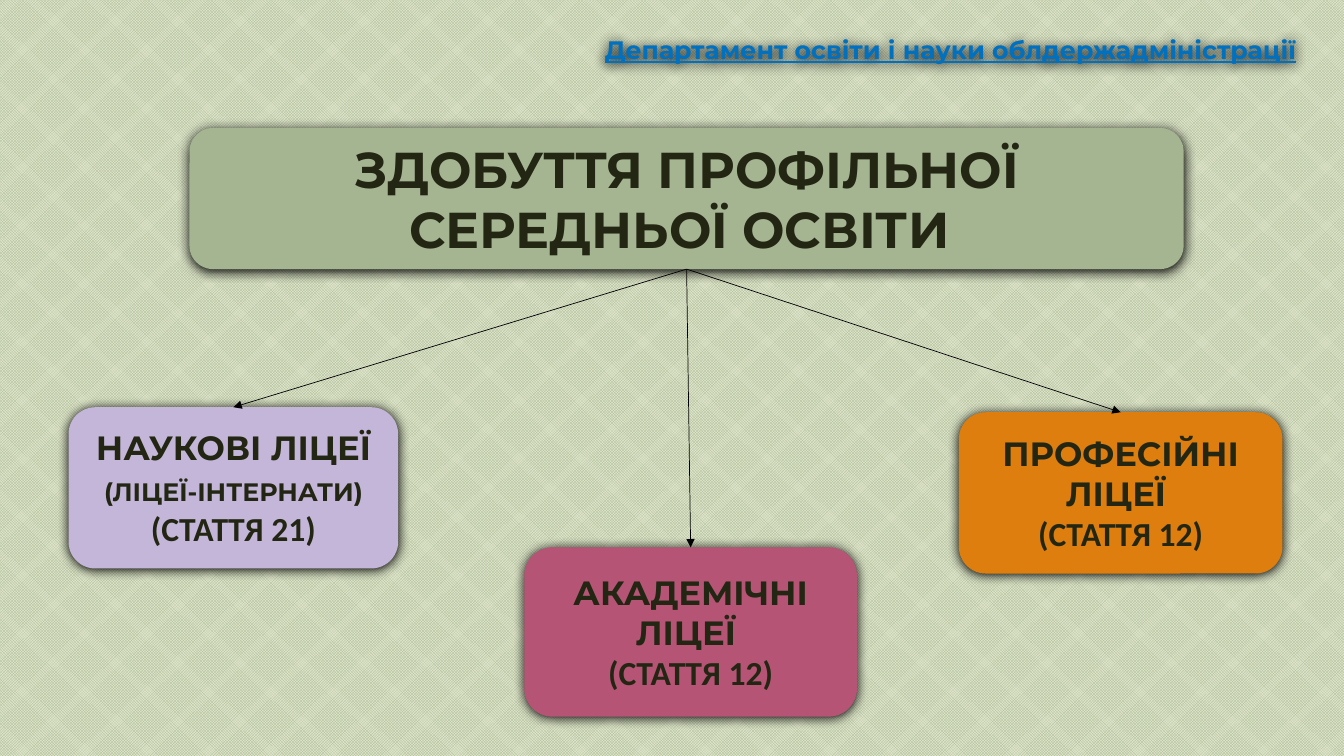
from lxml import etree
from pptx import Presentation
from pptx.dml.color import RGBColor
from pptx.enum.dml import MSO_PATTERN
from pptx.enum.shapes import MSO_CONNECTOR, MSO_SHAPE
from pptx.enum.text import MSO_ANCHOR, PP_ALIGN
from pptx.oxml.ns import qn
from pptx.util import Inches, Pt

ROUNDED = MSO_SHAPE.ROUNDED_RECTANGLE
STRAIGHT = MSO_CONNECTOR.STRAIGHT
CHECKER = MSO_PATTERN.SMALL_CHECKER_BOARD
MIDDLE = MSO_ANCHOR.MIDDLE
CENTER = PP_ALIGN.CENTER
LEFT = PP_ALIGN.LEFT

HEADING_FONT = "Montserrat"
ARTICLE_FONT = "Calibri"
INK = "222613"
SAGE = "A5B592"

TOPIC_BOX = (1.88, 1.27, 9.86, 1.4)
DEPARTMENT_BOX = (5.9, 0.29, 7.43, 0.4)
ARTICLE_12 = [("(СТАТТЯ 12)", 24, ARTICLE_FONT)]
LYCEUMS = [
    ((0.68, 4.04, 3.27, 1.6), "C4B6D9", [
        [("НАУКОВІ ЛІЦЕЇ", 24, HEADING_FONT)],
        [(" ", 24, ARTICLE_FONT), ("(ЛІЦЕЇ-ІНТЕРНАТИ) ", 18, HEADING_FONT)],
        [("(СТАТТЯ 21)", 24, ARTICLE_FONT)],
    ]),
    ((5.2, 5.43, 3.3, 1.68), "B55475", [
        [("АКАДЕМІЧНІ ЛІЦЕЇ ", 24, HEADING_FONT)], ARTICLE_12,
    ]),
    ((9.51, 4.09, 3.21, 1.6), "DD7E0E", [
        [("ПРОФЕСІЙНІ ЛІЦЕЇ ", 24, HEADING_FONT)], ARTICLE_12,
    ]),
]


def color(hex_value):
    """Turn a hex string into a colour."""
    return RGBColor.from_string(hex_value)


def add_soft_shadow(shape):
    """Give a shape a blurred black shadow just below it."""
    shape.shadow.inherit = False
    effects = shape._element.spPr.find(qn("a:effectLst"))
    shadow = etree.SubElement(effects, qn("a:outerShdw"), blurRad=str(Pt(8.5)),
                              dist=str(Pt(1)), dir="5400000", rotWithShape="0")
    etree.SubElement(shadow, qn("a:srgbClr"), val="000000")


def write_text(frame, paragraphs, ink, alignment, underline=None):
    """Fill a text frame with paragraphs of (text, size, font) runs."""
    frame.word_wrap = True
    for index, pieces in enumerate(paragraphs):
        paragraph = frame.paragraphs[0] if index == 0 else frame.add_paragraph()
        paragraph.alignment = alignment
        for text, size, font in pieces:
            run = paragraph.add_run()
            run.text = text
            run.font.color.rgb = color(ink)
            styles = {"size": Pt(size), "name": font, "bold": True, "underline": underline}
            for attribute, value in styles.items():
                setattr(run.font, attribute, value)


def add_card(slide, box, fill, paragraphs):
    """Draw a rounded card with centred text in the given box."""
    card = slide.shapes.add_shape(ROUNDED, *map(Inches, box))
    card.fill.solid()
    card.fill.fore_color.rgb = color(fill)
    card.line.fill.background()
    add_soft_shadow(card)
    card.text_frame.vertical_anchor = MIDDLE
    write_text(card.text_frame, paragraphs, INK, CENTER)


def add_branch(slide, topic_box, lyceum_box):
    """Draw an arrow from the topic's bottom centre to a lyceum's top centre."""
    left, top, width, height = topic_box
    end_left, end_top, end_width, _ = lyceum_box
    points = (left + width / 2, top + height, end_left + end_width / 2, end_top)
    branch = slide.shapes.add_connector(STRAIGHT, *map(Inches, points))
    branch.line.color.rgb = color("000000")
    branch.line.width = Pt(0.5)
    etree.SubElement(branch.line._get_or_add_ln(), qn("a:tailEnd"), type="triangle")
    etree.SubElement(branch._element.spPr, qn("a:effectLst"))


def add_department(slide, box):
    """Write the underlined department name in the given box."""
    department = slide.shapes.add_textbox(*map(Inches, box))
    add_soft_shadow(department)
    name = "Департамент освіти і науки облдержадміністрації"
    write_text(department.text_frame, [[(name, 18, HEADING_FONT)]], "0070C0", LEFT, True)


def paint_background(slide):
    """Cover the slide with a pale green checker pattern."""
    fill = slide.background.fill
    fill.patterned()
    fill.pattern = CHECKER
    fill.fore_color.rgb = color(SAGE)
    fill.back_color.rgb = color("DFE5CA")


def main():
    """Build the slide and save it."""
    presentation = Presentation()
    presentation.slide_width = Inches(13.33)
    presentation.slide_height = Inches(7.5)
    slide = presentation.slides.add_slide(presentation.slide_layouts[6])
    paint_background(slide)
    topic = "ЗДОБУТТЯ ПРОФІЛЬНОЇ СЕРЕДНЬОЇ ОСВІТИ "
    add_card(slide, TOPIC_BOX, SAGE, [[(topic, 36, HEADING_FONT)]])
    for box, fill, paragraphs in LYCEUMS:
        add_card(slide, box, fill, paragraphs)
        add_branch(slide, TOPIC_BOX, box)
    add_department(slide, DEPARTMENT_BOX)
    presentation.save("out.pptx")


if __name__ == "__main__":
    main()
